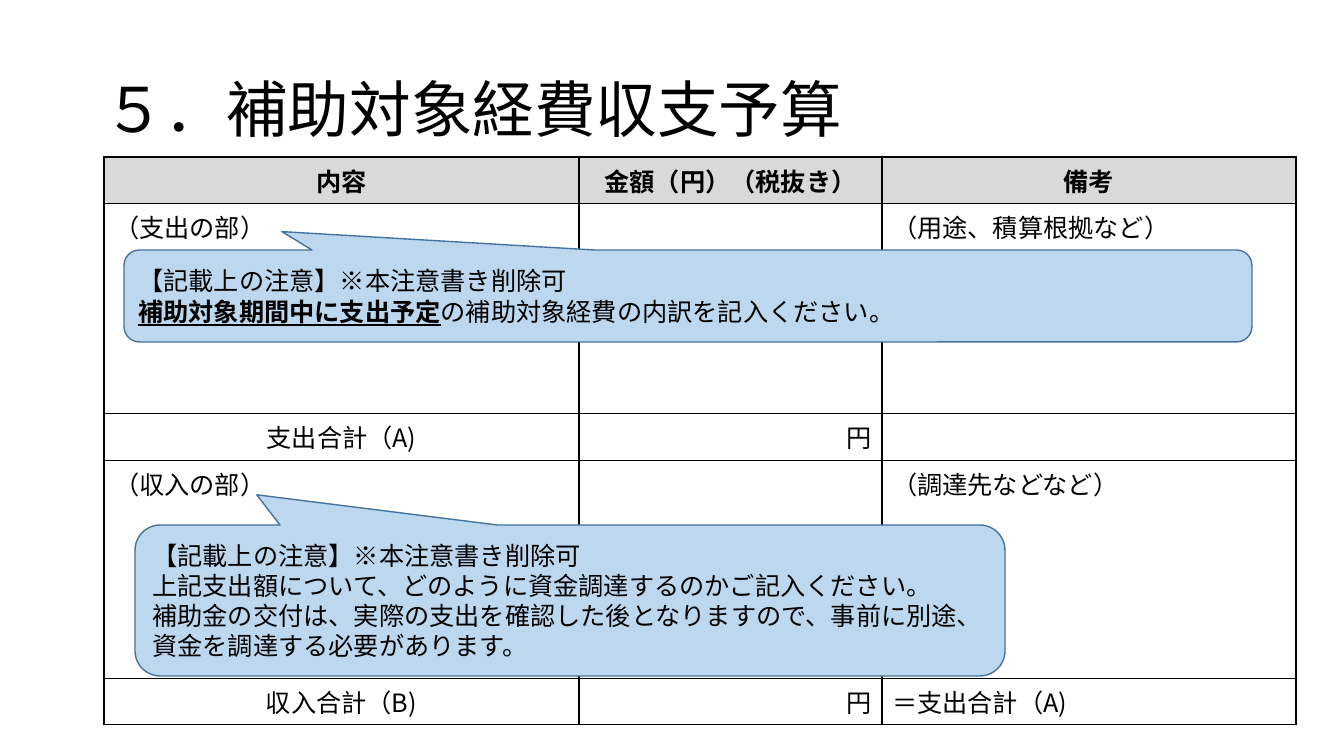
from pptx import Presentation
from pptx.dml.color import RGBColor
from pptx.enum.shapes import MSO_SHAPE
from pptx.enum.text import MSO_ANCHOR, MSO_AUTO_SIZE, PP_ALIGN
from pptx.oxml.ns import qn
from pptx.util import Pt
from lxml import etree

CALLOUT = MSO_SHAPE.ROUNDED_RECTANGULAR_CALLOUT
MIDDLE = MSO_ANCHOR.MIDDLE
NO_FIT = MSO_AUTO_SIZE.NONE
LEFT, CENTER, RIGHT = PP_ALIGN.LEFT, PP_ALIGN.CENTER, PP_ALIGN.RIGHT

EMU_PER_PX = 914400 / 100.8
COLORS = {
    "text": "000000",
    "header": "D9D9D9",
    "note": "BDD7EE",
    "note_line": "43739E",
    "border": "000000",
}
FONT = "Noto Sans CJK JP"
BODY = {"size": Pt(18), "bold": False, "underline": False}
HEADER = {**BODY, "bold": True}
EMPHASIS = {**BODY, "bold": True, "underline": True}
TITLE = {**BODY, "size": Pt(44)}

COLUMNS = [475, 303, 414]
ROWS = [41, 210, 41, 218, 41]
BUDGET = [
    ["内容", "金額（円）（税抜き）", "備考"],
    ["（支出の部）", "", "（用途、積算根拠など）"],
    ["支出合計（A)", "円", ""],
    ["（収入の部）", "", "（調達先などなど）"],
    ["収入合計（B)", "円", "＝支出合計（A)"],
]
TOTAL_ALIGN = [CENTER, RIGHT, LEFT]
ROW_ALIGN = [[CENTER] * 3, [LEFT] * 3, TOTAL_ALIGN, [LEFT] * 3, TOTAL_ALIGN]

NOTE_HEADING = [("【記載上の注意】※本注意書き削除可", BODY)]
EXPENSE_NOTE = [
    NOTE_HEADING,
    [("補助対象期間中に支出予定", EMPHASIS),
     ("の補助対象経費の内訳を記入ください。", BODY)],
]
INCOME_NOTE = [
    NOTE_HEADING,
    [("上記支出額について、どのように資金調達するのかご記入ください。", BODY)],
    [("補助金の交付は、実際の支出を確認した後となりますので、事前に別途、"
      "資金を調達する必要があります。", BODY)],
]


def px(n):
    return round(n * EMU_PER_PX)


def rgb(name):
    return RGBColor.from_string(COLORS[name])


class BudgetSlide:
    """Holds the slide and draws each kind of element in its style."""

    def __init__(self, prs):
        self.slide = prs.slides.add_slide(prs.slide_layouts[5])

    def text(self, tf, paragraphs, align=LEFT):
        """Fill a text frame; each paragraph is a list of (text, format)."""
        for i, runs in enumerate(paragraphs):
            p = tf.add_paragraph() if i else tf.paragraphs[0]
            p.alignment = align
            for content, fmt in runs:
                r = p.add_run()
                r.text = content
                for name, value in fmt.items():
                    setattr(r.font, name, value)
                r.font.color.rgb = rgb("text")
                r.font.name = FONT
                ea = etree.SubElement(r.font._element, qn("a:ea"))
                ea.set("typeface", FONT)

    def title(self, text, box):
        sp = self.slide.shapes.title
        sp.left, sp.top, sp.width, sp.height = map(px, box)
        tf = sp.text_frame
        tf.auto_size = NO_FIT
        tf.vertical_anchor = MIDDLE
        self.text(tf, [[(text, TITLE)]])
        tf.paragraphs[0].line_spacing = 0.9

    def border(self, cell):
        tc_pr = cell._tc.get_or_add_tcPr()
        for i, side in enumerate(("lnL", "lnR", "lnT", "lnB")):
            ln = etree.Element(qn(f"a:{side}"), w=str(Pt(1)))
            fill = etree.SubElement(ln, qn("a:solidFill"))
            etree.SubElement(fill, qn("a:srgbClr"), val=COLORS["border"])
            tc_pr.insert(i, ln)

    def table(self, rows, left, top):
        table = self.slide.shapes.add_table(
            len(ROWS), len(COLUMNS), px(left), px(top),
            px(sum(COLUMNS)), px(sum(ROWS))).table
        table.first_row = table.horz_banding = False
        for column, width in zip(table.columns, COLUMNS):
            column.width = px(width)
        for row, height in zip(table.rows, ROWS):
            row.height = px(height)
        for i, texts in enumerate(rows):
            for j, text in enumerate(texts):
                cell = table.cell(i, j)
                if i == 0:
                    cell.fill.solid()
                    cell.fill.fore_color.rgb = rgb("header")
                else:
                    cell.fill.background()
                self.border(cell)
                if text:
                    fmt = BODY if i else HEADER
                    self.text(cell.text_frame, [[(text, fmt)]], ROW_ALIGN[i][j])

    def callout(self, paragraphs, box, tip):
        """Draw a note; tip is the pointer end as fractions from its centre."""
        sp = self.slide.shapes.add_shape(CALLOUT, *map(px, box))
        sp.shadow.inherit = False
        for i, value in enumerate((*tip, 0.167)):
            sp.adjustments[i] = value
        sp.fill.solid()
        sp.fill.fore_color.rgb = rgb("note")
        sp.line.color.rgb = rgb("note_line")
        sp.line.width = Pt(1)
        tf = sp.text_frame
        tf.word_wrap = True
        tf.vertical_anchor = MIDDLE
        self.text(tf, paragraphs)


def main():
    prs = Presentation()
    prs.slide_width, prs.slide_height = px(1344), px(756)
    s = BudgetSlide(prs)
    s.title("５．補助対象経費収支予算", (93, 40, 1159, 146))
    s.table(BUDGET, 104, 157)
    s.callout(EXPENSE_NOTE, (124, 250, 1128, 92), (-0.36, -0.7))
    s.callout(INCOME_NOTE, (135, 525, 870, 151), (-0.36, -0.7))
    prs.save("out.pptx")


if __name__ == "__main__":
    main()
